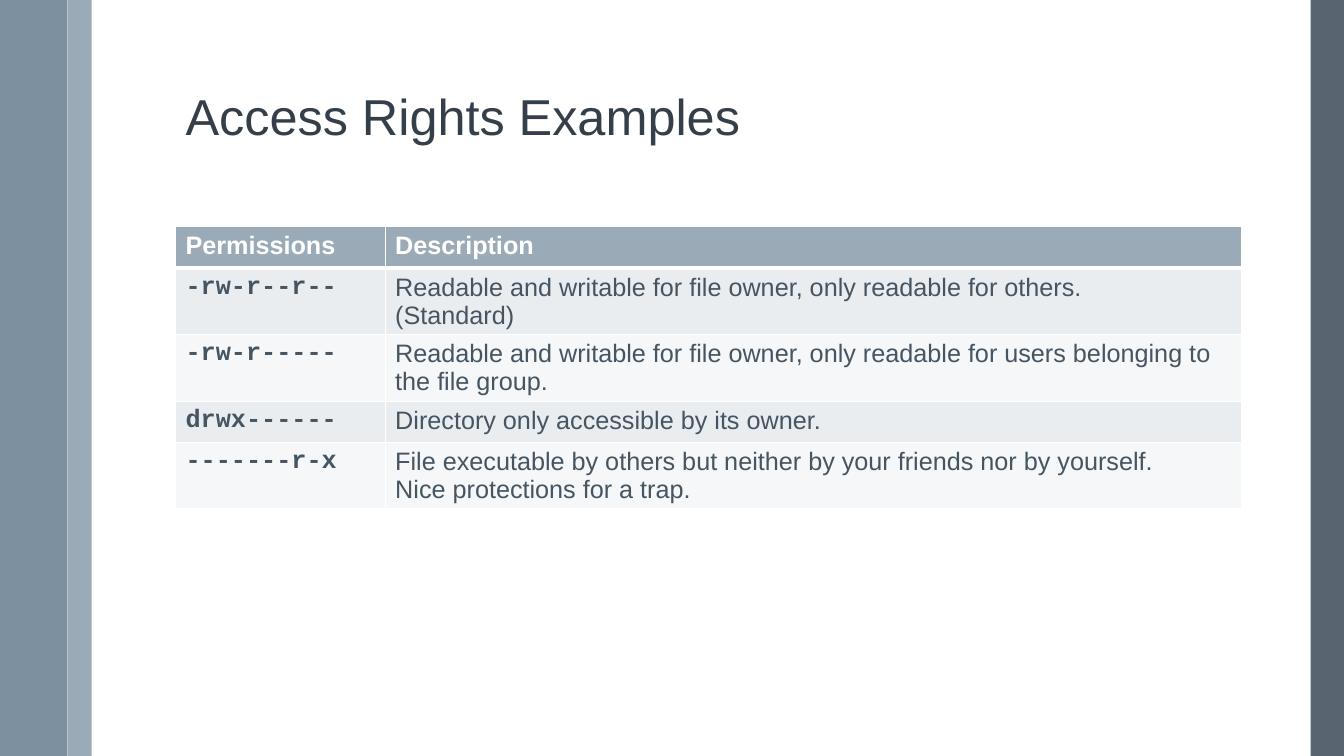
from dataclasses import dataclass

from lxml.etree import SubElement
from pptx import Presentation
from pptx.dml.color import RGBColor
from pptx.enum.shapes import MSO_SHAPE as Shape
from pptx.enum.text import MSO_ANCHOR as Anchor, MSO_AUTO_SIZE as Fit, PP_ALIGN as Align
from pptx.oxml import parse_xml
from pptx.oxml.ns import nsdecls, qn
from pptx.util import Inches, Pt

HEAD = "9BAAB7"
INK = "465562"
WHITE = "FFFFFF"
BANDS = ("EAEDF0", "F5F7F8")
SANS = "Arial"
MONO = "Courier New"


@dataclass
class Bar:
    left: float
    width: float
    color: str
    alpha: int = 100


@dataclass
class Right:
    mode: str
    text: str


BARS = [
    Bar(13, 0.33, INK, 90),
    Bar(0.67, 0.24, HEAD),
    Bar(0, 0.67, "6A8093", 87),
]

RIGHTS = [
    Right("-rw-r--r--", "Readable and writable for file owner, only readable for others.\n(Standard)"),
    Right("-rw-r-----", "Readable and writable for file owner, only readable for users belonging to the file group."),
    Right("drwx------", "Directory only accessible by its owner."),
    Right("-------r-x", "File executable by others but neither by your friends nor by yourself.\n"
          "Nice protections for a trap."),
]


def rgb(code: str) -> RGBColor:
    return RGBColor.from_string(code)


def style(frame, font: str, size: int, color: str, bold: bool = False) -> None:
    for para in frame.paragraphs:
        para.alignment = Align.LEFT
        for run in para.runs:
            run.font.name = font
            run.font.size = Pt(size)
            run.font.bold = bold
            run.font.color.rgb = rgb(color)


def draw_bar(slide, bar: Bar) -> None:
    shape = slide.shapes.add_shape(
        Shape.RECTANGLE, Inches(bar.left), 0, Inches(bar.width), Inches(7.5))
    shape.shadow.inherit = False
    shape.line.fill.background()
    shape.fill.solid()
    shape.fill.fore_color.rgb = rgb(bar.color)
    if bar.alpha < 100:
        tint = shape.fill._xPr.find(".//" + qn("a:srgbClr"))
        SubElement(tint, qn("a:alpha"), val=str(bar.alpha * 1000))


def draw_title(slide, text: str) -> None:
    title = slide.shapes.title
    title.left, title.top = Inches(1.74), Inches(0.19)
    title.width, title.height = Inches(10.7), Inches(1.36)
    frame = title.text_frame
    frame.text = text
    frame.word_wrap = True
    frame.auto_size = Fit.NONE
    frame.vertical_anchor = Anchor.BOTTOM
    frame.margin_left = frame.margin_right = Inches(0.1)
    frame.margin_top = frame.margin_bottom = Inches(0.1)
    frame.paragraphs[0].line_spacing = 0.9
    style(frame, SANS, 36, "343F49")


def set_edges(cell, widths: dict[str, int]) -> None:
    props = cell._tc.get_or_add_tcPr()
    for spot, (side, width) in enumerate(widths.items()):
        props.insert(spot, parse_xml(
            f'<a:ln{side} {nsdecls("a")} w="{Pt(width)}"><a:solidFill>'
            f'<a:srgbClr val="{WHITE}"/></a:solidFill></a:ln{side}>'))


def fill_cell(cell, text: str, font: str, color: str, bold: bool, back: str,
              top: int, base: int) -> None:
    cell.text_frame.text = text
    style(cell.text_frame, font, 18, color, bold)
    cell.fill.solid()
    cell.fill.fore_color.rgb = rgb(back)
    set_edges(cell, {"L": 1, "R": 1, "T": top, "B": base})


def draw_table(slide, rights: list[Right]) -> None:
    table = slide.shapes.add_table(
        len(rights) + 1, 2, Inches(1.74), Inches(2.25), Inches(10.57), Inches(2.05)).table
    for col, width in zip(table.columns, (2.08, 8.49)):
        col.width = Inches(width)
    for row in table.rows:
        row.height = Inches(0.41)
    for col, name in enumerate(("Permissions", "Description")):
        fill_cell(table.cell(0, col), name, SANS, WHITE, True, HEAD, 1, 3)
    for row, right in enumerate(rights, 1):
        back = BANDS[(row - 1) % 2]
        top = 3 if row == 1 else 1
        fill_cell(table.cell(row, 0), right.mode, MONO, INK, True, back, top, 1)
        fill_cell(table.cell(row, 1), right.text, SANS, INK, False, back, top, 1)


def main() -> None:
    deck = Presentation()
    deck.slide_width, deck.slide_height = Inches(13.33), Inches(7.5)
    slide = deck.slides.add_slide(deck.slide_layouts[5])
    for bar in BARS:
        draw_bar(slide, bar)
    draw_title(slide, "Access Rights Examples")
    draw_table(slide, RIGHTS)
    deck.save("out.pptx")


if __name__ == "__main__":
    main()
